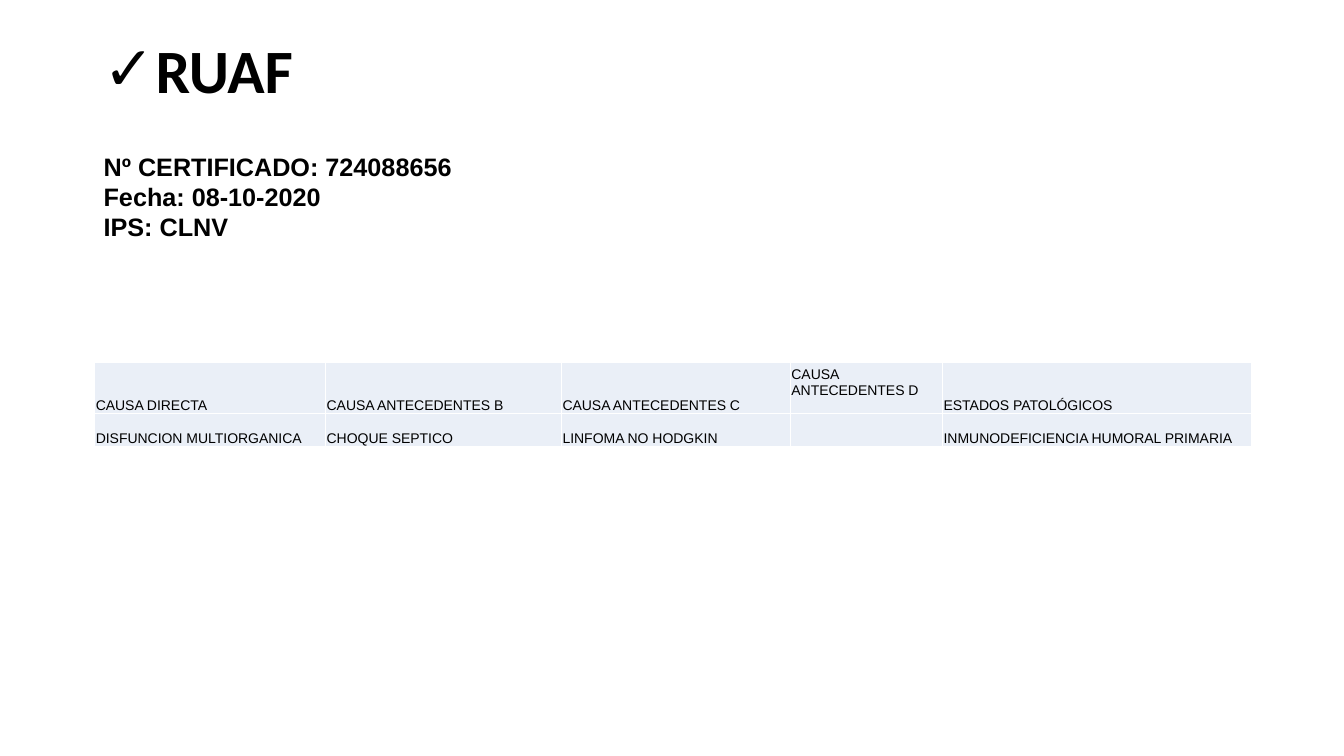
"""Build the RUAF certificate slide with its table of causes."""
from dataclasses import dataclass

from lxml import etree
from pptx import Presentation, util as u
from pptx.dml.color import RGBColor
from pptx.enum import text
from pptx.oxml import ns


@dataclass(frozen=True)
class Theme:
    ink: str = "000000"
    rule: str = "FFFFFF"
    pale: str = "EAEFF7"
    head: str = "Calibri"
    body: str = "Arial"
    large: int = 44
    mid: int = 18
    small: int = 10


def px(num):
    return u.Emu(num * 9144)


class Deck:
    def __init__(self, theme):
        self.theme = theme
        self.file = Presentation()
        self.file.slide_width, self.file.slide_height = px(1333), px(750)
        self.slide = self.file.slides.add_slide(self.file.slide_layouts[5])

    def style(self, para, name, size, bold):
        font = para.font
        font.name, font.size, font.bold = name, u.Pt(size), bold
        font.color.rgb = RGBColor.from_string(self.theme.ink)
        para.alignment = text.PP_ALIGN.LEFT

    def title(self, words, box, mark, indent):
        shape = self.slide.shapes.title
        shape.left, shape.top, shape.width, shape.height = map(px, box)
        frame = shape.text_frame
        frame.text = words
        frame.vertical_anchor = text.MSO_ANCHOR.MIDDLE
        para = frame.paragraphs[0]
        self.style(para, self.theme.head, self.theme.large, True)
        para.line_spacing = 0.9
        props = para._p.get_or_add_pPr()
        props.set("marL", str(px(indent)))
        props.set("indent", str(-px(indent)))
        etree.SubElement(props, ns.qn("a:buFont"), typeface=self.theme.body)
        etree.SubElement(props, ns.qn("a:buChar"), char=mark)

    def note(self, lines, box):
        frame = self.slide.shapes.add_textbox(*map(px, box)).text_frame
        frame.word_wrap = True
        frame.auto_size = text.MSO_AUTO_SIZE.SHAPE_TO_FIT_TEXT
        frame.text = "\n".join(lines)
        for para in frame.paragraphs:
            self.style(para, self.theme.body, self.theme.mid, True)

    def border(self, cell):
        props = cell._tc.get_or_add_tcPr()
        for side in ("lnL", "lnR", "lnT", "lnB"):
            line = etree.SubElement(props, ns.qn("a:" + side), w=str(u.Pt(1)))
            fill = etree.SubElement(line, ns.qn("a:solidFill"))
            etree.SubElement(fill, ns.qn("a:srgbClr"), val=self.theme.rule)

    def cell(self, cell, words):
        self.border(cell)
        cell.fill.solid()
        cell.fill.fore_color.rgb = RGBColor.from_string(self.theme.pale)
        cell.margin_left = cell.margin_right = cell.margin_top = px(1)
        cell.margin_bottom = 0
        cell.vertical_anchor = text.MSO_ANCHOR.BOTTOM
        cell.text = words
        self.style(cell.text_frame.paragraphs[0], self.theme.body,
                   self.theme.small, False)

    def table(self, data, left, top, cols, rows):
        box = (left, top, sum(cols), sum(rows))
        grid = self.slide.shapes.add_table(
            len(rows), len(cols), *map(px, box)).table
        grid.first_row = grid.horz_banding = False
        for col, wide in zip(grid.columns, cols):
            col.width = px(wide)
        for row, high, words in zip(grid.rows, rows, data):
            row.height = px(high)
            for cell, word in zip(row.cells, words):
                self.cell(cell, word)
        return grid


def main():
    deck = Deck(Theme())
    deck.title("RUAF", (93, 0, 1150, 145), "✓", 31)
    deck.note(["Nº CERTIFICADO: 724088656", "Fecha: 08-10-2020", "IPS: CLNV"],
              (93, 145, 950, 101))
    causes = [
        ["CAUSA DIRECTA", "CAUSA ANTECEDENTES B", "CAUSA ANTECEDENTES C",
         "CAUSA ANTECEDENTES D", "ESTADOS PATOLÓGICOS"],
        ["DISFUNCION MULTIORGANICA", "CHOQUE SEPTICO", "LINFOMA NO HODGKIN",
         "", "INMUNODEFICIENCIA HUMORAL PRIMARIA"],
    ]
    grid = deck.table(causes, 94, 360, (229, 234, 227, 151, 306), (50, 33))
    last = grid.cell(0, 3)
    last.vertical_anchor = text.MSO_ANCHOR.TOP
    last.margin_top = px(4)
    deck.file.save("out.pptx")


if __name__ == "__main__":
    main()
